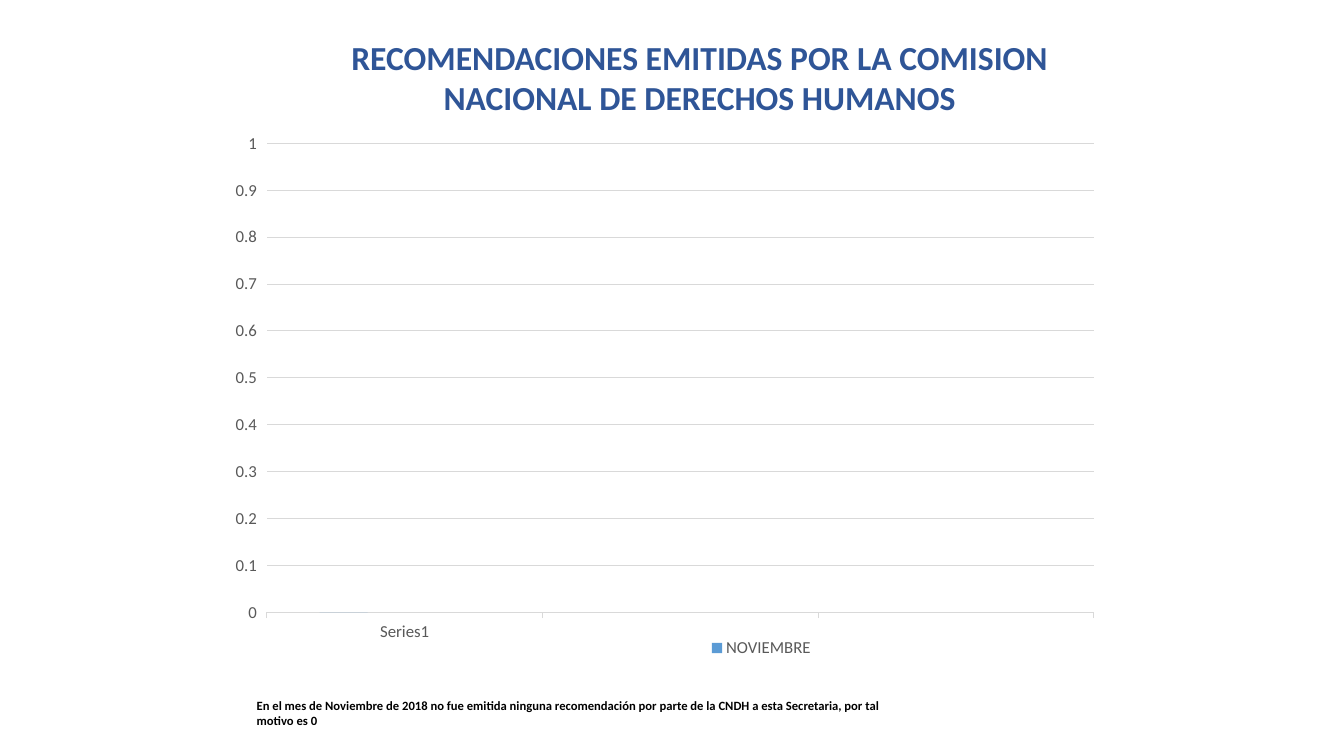
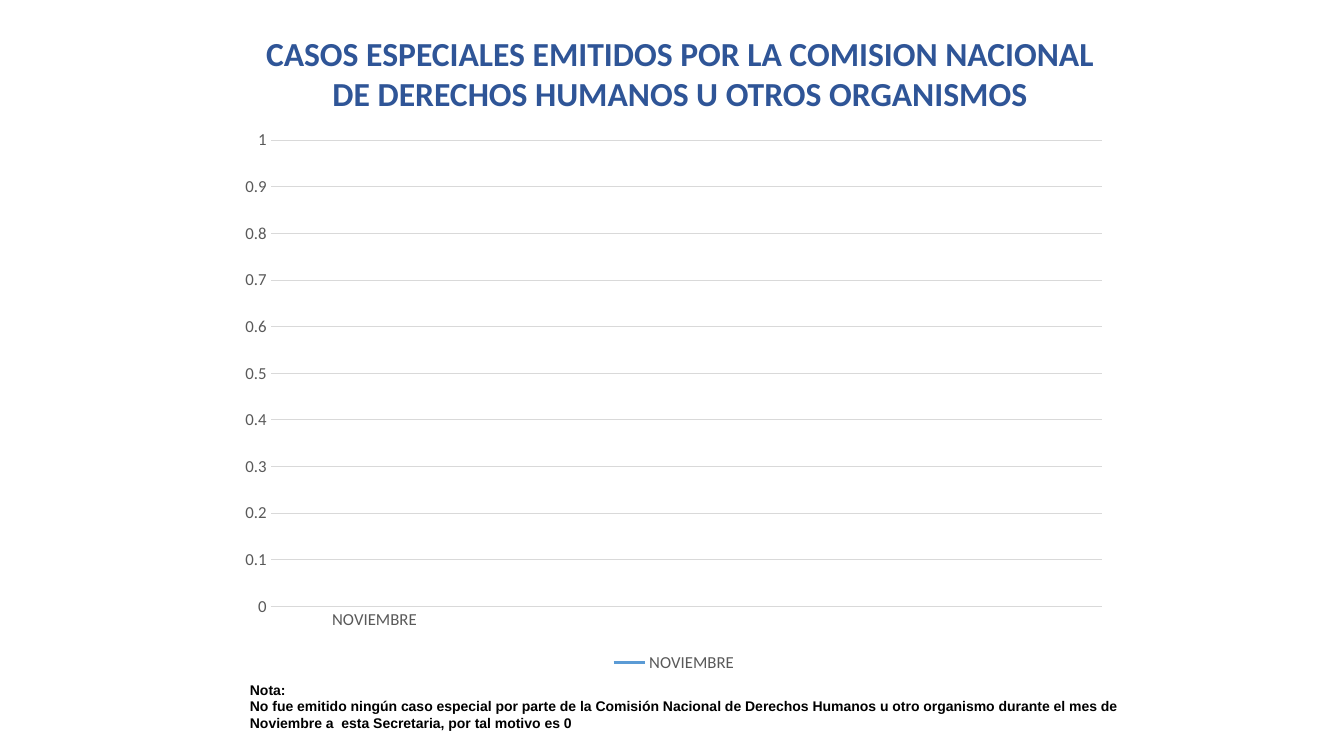
from lxml import etree
from pptx import Presentation
from pptx import util as u
from pptx.chart import data as cd
from pptx.dml import color as dml
from pptx.enum import chart as ch, text
from pptx.oxml import ns

BLUE, BLACK, GRAY, PALE = "2F5597", "000000", "595959", "D9D9D9"
TONES = ["5B9BD5", "ED7D31", "A5A5A5"]
NAMES = ["NOVIEMBRE", "Series 2", "Series 3"]


def style(font, size, tone, face="Calibri", bold=False):
    font.size, font.name, font.bold = u.Pt(size), face, bold
    font.color.rgb = dml.RGBColor.from_string(tone)


def layout(**spots):
    node = etree.Element(ns.qn("c:layout"))
    manual = etree.SubElement(node, ns.qn("c:manualLayout"))
    if "w" in spots:
        etree.SubElement(manual, ns.qn("c:layoutTarget"), val="inner")
    for key in "xy":
        etree.SubElement(manual, ns.qn(f"c:{key}Mode"), val="edge")
    for key, val in spots.items():
        etree.SubElement(manual, ns.qn(f"c:{key}"), val=str(val))
    return node


pages = [
    dict(title="RECOMENDACIONES EMITIDAS POR LA COMISION NACIONAL DE DERECHOS HUMANOS",
         head=(7.04, 0.79, 21.18, 2.31),
         kind=ch.XL_CHART_TYPE.COLUMN_CLUSTERED, box=(5.72, 2.01, 22.38, 14.86),
         cats=["Series1", "", ""], vals=[[0, None, None], [None] * 3, [None] * 3],
         tick=ch.XL_TICK_MARK.OUTSIDE,
         plot=dict(x=0.045, y=0.108, w=0.931, h=0.795), key=dict(x=0.54, y=0.94),
         note=["En el mes de Noviembre de 2018 no fue emitida ninguna recomendación por parte de la CNDH a esta Secretaria, por tal  motivo es 0"],
         foot=(6.22, 17.45, 17.07, 1.02), size=9, face="Calibri"),
    dict(title="CASOS ESPECIALES EMITIDOS POR LA COMISION NACIONAL DE DERECHOS HUMANOS U OTROS ORGANISMOS",
         head=(6.05, 0.69, 22.17, 2.31),
         kind=ch.XL_CHART_TYPE.LINE, box=(5.74, 3, 22.48, 14.05),
         cats=["NOVIEMBRE", "", "", ""], vals=[[0, None, None, None]] * 3,
         tick=ch.XL_TICK_MARK.NONE,
         plot=dict(x=0.048, y=0.038, w=0.932, h=0.836), key=None,
         note=["Nota:",
               "No fue emitido ningún caso especial por parte de la Comisión Nacional de Derechos Humanos u otro organismo durante el mes de Noviembre a  esta Secretaria, por tal motivo es 0"],
         foot=(6.05, 17.04, 23.16, 1.55), size=10, face="Arial"),
]

deck = Presentation()
deck.slide_width, deck.slide_height = u.Cm(33.87), u.Cm(19.05)

for page in pages:
    slide = deck.slides.add_slide(deck.slide_layouts[5])
    title = slide.shapes.title
    title.left, title.top, title.width, title.height = map(u.Cm, page["head"])
    frame = title.text_frame
    frame.word_wrap = True
    frame.auto_size = text.MSO_AUTO_SIZE.NONE
    frame.vertical_anchor = text.MSO_ANCHOR.TOP
    para = frame.paragraphs[0]
    para.alignment = text.PP_ALIGN.CENTER
    run = para.add_run()
    run.text = page["title"]
    style(run.font, 24, BLUE, bold=True)

    data = cd.CategoryChartData()
    data.categories = page["cats"]
    for name, vals in zip(NAMES, page["vals"]):
        data.add_series(name, vals)
    chart = slide.shapes.add_chart(page["kind"], *map(u.Cm, page["box"]), data).chart
    style(chart.font, 10, BLACK)
    chart.has_title = False
    plot = chart.plots[0]
    plot.vary_by_categories = False
    bars = page["kind"] == ch.XL_CHART_TYPE.COLUMN_CLUSTERED
    if bars:
        plot.gap_width, plot.overlap = 219, -27
    for series, tone in zip(plot.series, TONES):
        rgb = dml.RGBColor.from_string(tone)
        if bars:
            series.format.fill.solid()
            series.format.fill.fore_color.rgb = rgb
        else:
            series.smooth = False
            series.marker.style = ch.XL_MARKER_STYLE.NONE
            series.format.line.color.rgb = rgb
            series.format.line.width = u.Pt(2.25)

    cat, val = chart.category_axis, chart.value_axis
    val.minimum_scale, val.maximum_scale, val.major_unit = 0, 1, 0.1
    val.has_major_gridlines = True
    val.format.line.fill.background()
    for axis in (cat, val):
        axis.major_tick_mark = page["tick"]
        axis.minor_tick_mark = ch.XL_TICK_MARK.NONE
        style(axis.tick_labels.font, 12, GRAY)
    for line in (cat.format.line, val.major_gridlines.format.line):
        line.color.rgb = dml.RGBColor.from_string(PALE)
        line.width = u.Pt(0.75)

    chart.has_legend = True
    legend = chart.legend
    legend.position = ch.XL_LEGEND_POSITION.BOTTOM
    legend.include_in_layout = False
    style(legend.font, 12, GRAY)
    root = chart.element
    area = root.find(".//" + ns.qn("c:plotArea"))
    keys = root.find(".//" + ns.qn("c:legend"))
    for node in (area, keys):
        for old in node.findall(ns.qn("c:layout")):
            node.remove(old)
    area.insert(0, layout(**page["plot"]))
    over = keys.find(ns.qn("c:overlay"))
    for idx in (1, 2):
        entry = etree.Element(ns.qn("c:legendEntry"))
        etree.SubElement(entry, ns.qn("c:idx"), val=str(idx))
        etree.SubElement(entry, ns.qn("c:delete"), val="1")
        over.addprevious(entry)
    if page["key"]:
        over.addprevious(layout(**page["key"]))
    back = etree.Element(ns.qn("c:spPr"))
    for tag in ("a:noFill", "a:ln"):
        etree.SubElement(back, ns.qn(tag))
    etree.SubElement(back[1], ns.qn("a:noFill"))
    root.find(ns.qn("c:chart")).addnext(back)

    frame = slide.shapes.add_textbox(*map(u.Cm, page["foot"])).text_frame
    frame.word_wrap = True
    for num, words in enumerate(page["note"]):
        para = frame.add_paragraph() if num else frame.paragraphs[0]
        run = para.add_run()
        run.text = words
        style(run.font, page["size"], BLACK, page["face"], True)

deck.save("out.pptx")
